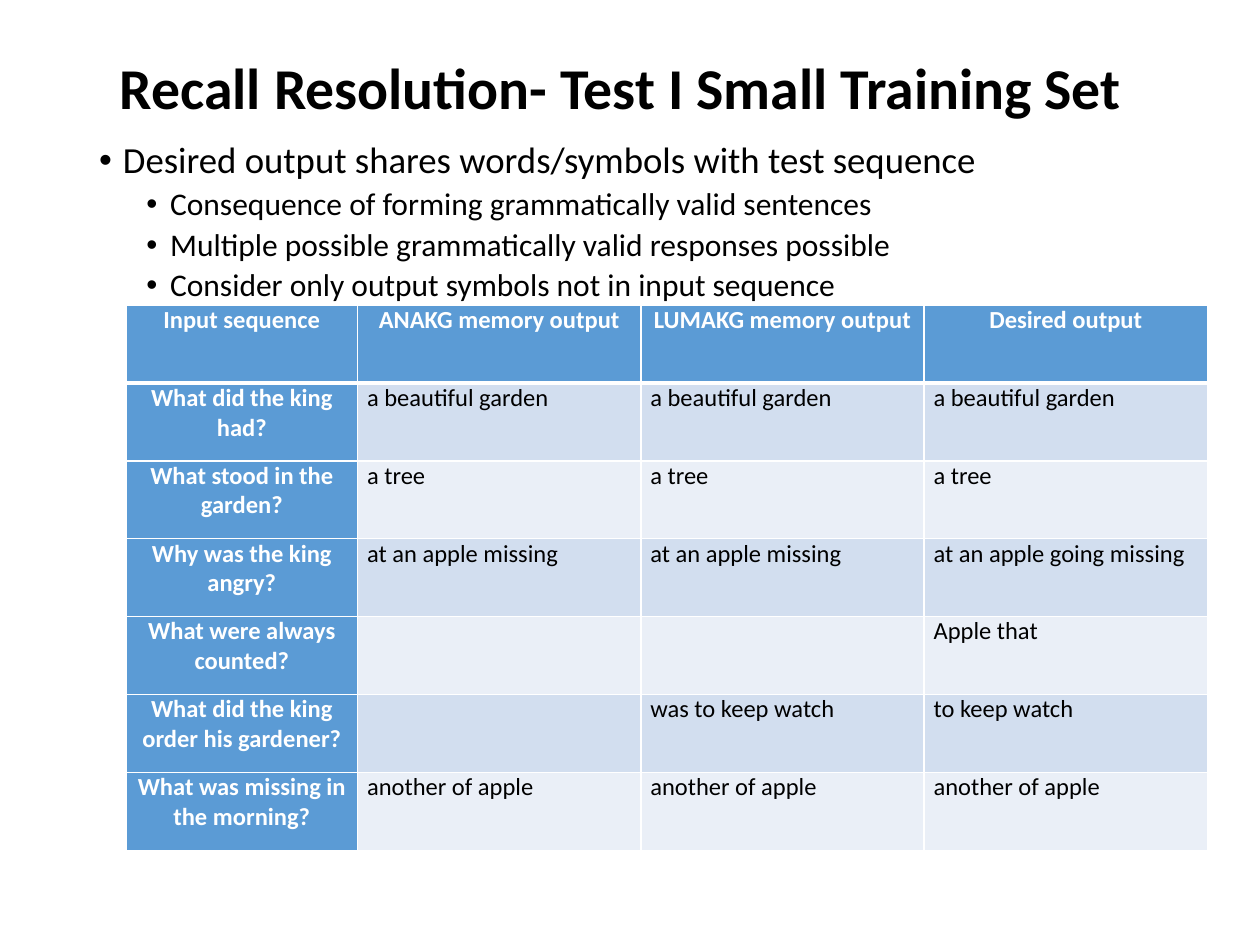
import pptx
import pptx.dml.color
import pptx.enum.text
import pptx.oxml
import pptx.oxml.ns
import pptx.util

Cm = pptx.util.Cm
Pt = pptx.util.Pt
Align = pptx.enum.text.PP_ALIGN
Anchor = pptx.enum.text.MSO_ANCHOR
Fit = pptx.enum.text.MSO_AUTO_SIZE

BLACK, WHITE, BLUE = "000000", "FFFFFF", "5B9BD5"
BANDS = ("D2DEEF", "EAEFF7")

TITLE = "Recall Resolution- Test I Small Training Set"
POINTS = [
    (0, "Desired output shares words/symbols with test sequence"),
    (1, "Consequence of forming grammatically valid sentences"),
    (1, "Multiple possible grammatically valid responses possible"),
    (1, "Consider only output symbols not in input sequence"),
]
LEVELS = [
    {"size": 21, "gap": 7.5, "left": 0.48},
    {"size": 18, "gap": 3.8, "left": 1.43},
]
ROWS = [
    ("Input sequence", "ANAKG memory output", "LUMAKG memory output", "Desired output"),
    ("What did the king had?",) + ("a beautiful garden",) * 3,
    ("What stood in the garden?",) + ("a tree",) * 3,
    ("Why was the king angry?", "at an apple missing", "at an apple missing", "at an apple going missing"),
    ("What were always counted?", "", "", "Apple that"),
    ("What did the king order his gardener?", "", "was to keep watch", "to keep watch"),
    ("What was missing in the morning?",) + ("another of apple",) * 3,
]


def color(code):
    return pptx.dml.color.RGBColor.from_string(code)


def assign(item, values):
    for name, value in values.items():
        setattr(item, name, value)


def node(markup):
    return pptx.oxml.parse_xml(markup.replace(">", f" {pptx.oxml.ns.nsdecls('a')}>", 1))


class Deck:
    font = "Calibri"

    def __init__(self):
        self.show = pptx.Presentation()
        assign(self.show, {"slide_width": Cm(25.4), "slide_height": Cm(19.05)})
        self.slide = self.show.slides.add_slide(self.show.slide_layouts[5])

    def label(self, para, text, size, tint=BLACK, bold=False):
        run = para.add_run()
        run.text = text
        assign(run.font, {"name": self.font, "size": Pt(size), "bold": bold})
        run.font.color.rgb = color(tint)

    def title(self, text, left, top, width, height):
        shape = self.slide.shapes.title
        assign(shape, {"left": Cm(left), "top": Cm(top), "width": Cm(width), "height": Cm(height)})
        frame = shape.text_frame
        assign(frame, {"word_wrap": True, "auto_size": Fit.NONE, "vertical_anchor": Anchor.MIDDLE})
        para = frame.paragraphs[0]
        assign(para, {"alignment": Align.LEFT, "line_spacing": 0.9})
        self.label(para, text, 33, bold=True)

    def bullets(self, points, left, top, width, height):
        box = self.slide.shapes.add_textbox(Cm(left), Cm(top), Cm(width), Cm(height))
        frame = box.text_frame
        frame.word_wrap = True
        for index, (level, text) in enumerate(points):
            para = frame.add_paragraph() if index else frame.paragraphs[0]
            style = LEVELS[level]
            assign(para, {"level": level, "line_spacing": 0.9, "space_before": Pt(style["gap"])})
            props = para._p.get_or_add_pPr()
            props.set("marL", str(Cm(style["left"])))
            props.set("indent", str(-Cm(0.48)))
            props.append(node('<a:buFont typeface="Arial"></a:buFont>'))
            props.append(node('<a:buChar char="•"></a:buChar>'))
            self.label(para, text, style["size"])

    def border(self, cell, head):
        props = cell._tc.get_or_add_tcPr()
        for index, side in enumerate("LRTB"):
            width = Pt(3 if head and side == "B" else 1)
            props.insert(index, node(
                f'<a:ln{side}><a:solidFill><a:srgbClr val="{WHITE}"/></a:solidFill></a:ln{side}>'))
            props[index].set("w", str(width))

    def table(self, rows, left, top, widths, height):
        shape = self.slide.shapes.add_table(
            len(rows), len(widths), Cm(left), Cm(top), Cm(sum(widths)), Cm(height * len(rows)))
        grid = shape.table
        for column, width in zip(grid.columns, widths):
            column.width = Cm(width)
        for r, texts in enumerate(rows):
            grid.rows[r].height = Cm(height)
            for c, text in enumerate(texts):
                head = r == 0 or c == 0
                cell = grid.cell(r, c)
                assign(cell, {"margin_left": Cm(0.19), "margin_right": Cm(0.19),
                              "margin_top": 0, "margin_bottom": 0})
                cell.fill.solid()
                cell.fill.fore_color.rgb = color(BLUE if head else BANDS[(r - 1) % 2])
                self.border(cell, r == 0)
                para = cell.text_frame.paragraphs[0]
                para.alignment = Align.CENTER if head else Align.LEFT
                if text:
                    self.label(para, text, 14, WHITE if head else BLACK, head)


def main():
    deck = Deck()
    deck.title(TITLE, 2.16, 0, 21.89, 3.68)
    deck.bullets(POINTS, 1.75, 2.74, 23.65, 14.4)
    deck.table(ROWS, 2.54, 6.15, (4.67, 5.71, 5.71, 5.71), 1.57)
    deck.show.save("out.pptx")


if __name__ == "__main__":
    main()
